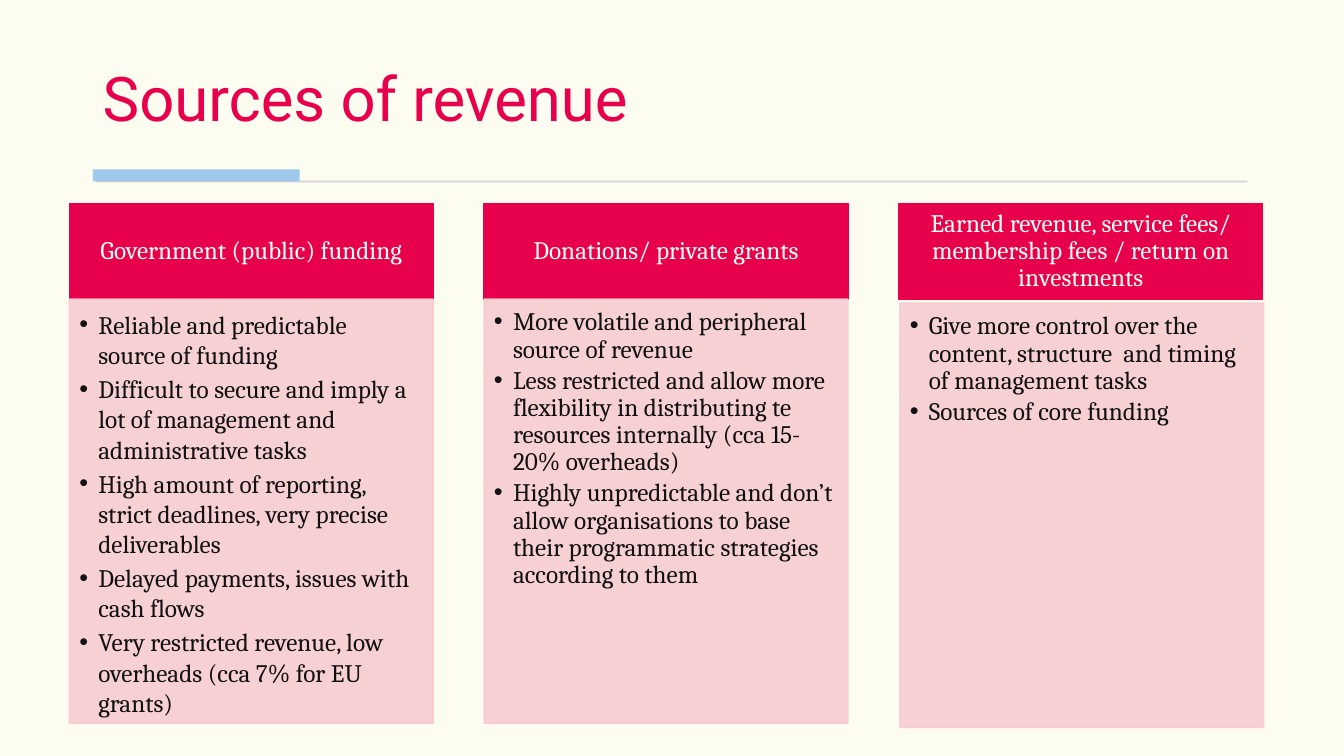
from lxml.etree import SubElement
from pptx import Presentation
from pptx.dml.color import RGBColor
from pptx.enum.shapes import MSO_SHAPE
from pptx.enum.text import MSO_ANCHOR, PP_ALIGN
from pptx.oxml.ns import qn
from pptx.util import Cm, Pt

TITLE = "Sources of revenue"
COLUMNS = [
    ("Government (public) funding", [
        "Reliable and predictable source of funding",
        "Difficult to secure and imply a lot of management and administrative tasks",
        "High amount of reporting, strict deadlines, very precise deliverables",
        "Delayed payments, issues with cash flows",
        "Very restricted revenue, low overheads (cca 7% for EU grants)",
    ]),
    ("Donations/ private grants", [
        "More volatile and peripheral source of revenue",
        "Less restricted and allow more flexibility in distributing te resources "
        "internally (cca 15-20% overheads)",
        "Highly unpredictable and don’t allow organisations to base their "
        "programmatic strategies according to them",
    ]),
    ("Earned revenue, service fees/ membership fees / return on investments", [
        "Give more control over the content, structure  and timing of management tasks",
        "Sources of core funding",
    ]),
]
BODY_LINE_SPACING = [1.0, 0.9, 0.9]
BODY_SHIFT = [(0, 0), (0, 0), (0.03, 0.1)]

COLORS = {"page": "FCFCF1", "accent": "E7004C", "panel": "F6CCD0",
          "text": "111111", "rule": "D5D5D5", "marker": "9EC9ED"}

COLUMN_LEFT, COLUMN_PITCH, COLUMN_WIDTH = 1.75, 10.45, 9.17
HEADER_TOP, HEADER_HEIGHT, BODY_HEIGHT = 5.13, 2.41, 10.69
BULLET_INDENT = Cm(0.48)


def color(name):
    return RGBColor.from_string(COLORS[name])


def add_rectangle(page, left, top, width, height, fill, outlined=False):
    box = page.shapes.add_shape(MSO_SHAPE.RECTANGLE, Cm(left), Cm(top), Cm(width), Cm(height))
    box.shadow.inherit = False
    box.fill.solid()
    box.fill.fore_color.rgb = color(fill)
    if outlined:
        box.line.color.rgb = color(fill)
        box.line.width = Pt(1)
    else:
        box.line.fill.background()
    return box


def set_opacity(box, percent):
    """Apply the same opacity to the fill and the outline."""
    for swatch in box._element.spPr.iter(qn("a:srgbClr")):
        SubElement(swatch, qn("a:alpha"), val=str(percent * 1000))


def prepare_frame(box, anchor, insets):
    frame = box.text_frame
    frame.word_wrap = True
    frame.vertical_anchor = anchor
    (frame.margin_left, frame.margin_top,
     frame.margin_right, frame.margin_bottom) = map(Cm, insets)
    return frame


def style_paragraph(para, font, size, font_color, align, line_spacing):
    para.alignment = align
    para.line_spacing = line_spacing
    for span in para.runs:
        span.font.name = font
        span.font.size = Pt(size)
        span.font.color.rgb = color(font_color)


def add_bullet(para):
    properties = para._p.get_or_add_pPr()
    properties.set("marL", str(BULLET_INDENT))
    properties.set("indent", str(-BULLET_INDENT))
    SubElement(properties, qn("a:buFont"), typeface="Arial")
    SubElement(properties, qn("a:buChar"), char="•")


def add_title(page):
    box = page.shapes.add_textbox(Cm(2.34), Cm(0.71), Cm(29.18), Cm(2.82))
    frame = prepare_frame(box, MSO_ANCHOR.BOTTOM, (0.25, 0.13, 0.25, 0.13))
    frame.text = TITLE
    style_paragraph(frame.paragraphs[0], "Roboto", 44, "accent", PP_ALIGN.LEFT, 0.9)
    add_rectangle(page, 2.41, 4.55, 29.03, 0.05, "rule")
    add_rectangle(page, 2.34, 4.27, 5.21, 0.3, "marker")


def add_column(page, left, heading, points, line_spacing, shift):
    header = add_rectangle(page, left, HEADER_TOP, COLUMN_WIDTH, HEADER_HEIGHT, "accent", True)
    frame = prepare_frame(header, MSO_ANCHOR.MIDDLE, (0.36, 0.2, 0.36, 0.2))
    frame.text = heading
    style_paragraph(frame.paragraphs[0], "Cambria", 18, "page", PP_ALIGN.CENTER, 0.9)

    body = add_rectangle(page, left + shift[0], HEADER_TOP + HEADER_HEIGHT + shift[1],
                         COLUMN_WIDTH, BODY_HEIGHT, "panel", True)
    set_opacity(body, 90)
    frame = prepare_frame(body, MSO_ANCHOR.TOP, (0.25, 0.25, 0.36, 0.4))
    frame.text = "\n".join(points)
    for para in frame.paragraphs:
        add_bullet(para)
        para.space_after = Pt(2.7)
        style_paragraph(para, "Cambria", 18, "text", PP_ALIGN.LEFT, line_spacing)


def main():
    deck = Presentation()
    deck.slide_width, deck.slide_height = Cm(33.87), Cm(19.05)
    page = deck.slides.add_slide(deck.slide_layouts[6])
    page.background.fill.solid()
    page.background.fill.fore_color.rgb = color("page")
    add_title(page)
    columns = zip(COLUMNS, BODY_LINE_SPACING, BODY_SHIFT)
    for index, ((heading, points), line_spacing, shift) in enumerate(columns):
        left = COLUMN_LEFT + index * COLUMN_PITCH
        add_column(page, left, heading, points, line_spacing, shift)
    deck.save("out.pptx")


if __name__ == "__main__":
    main()
